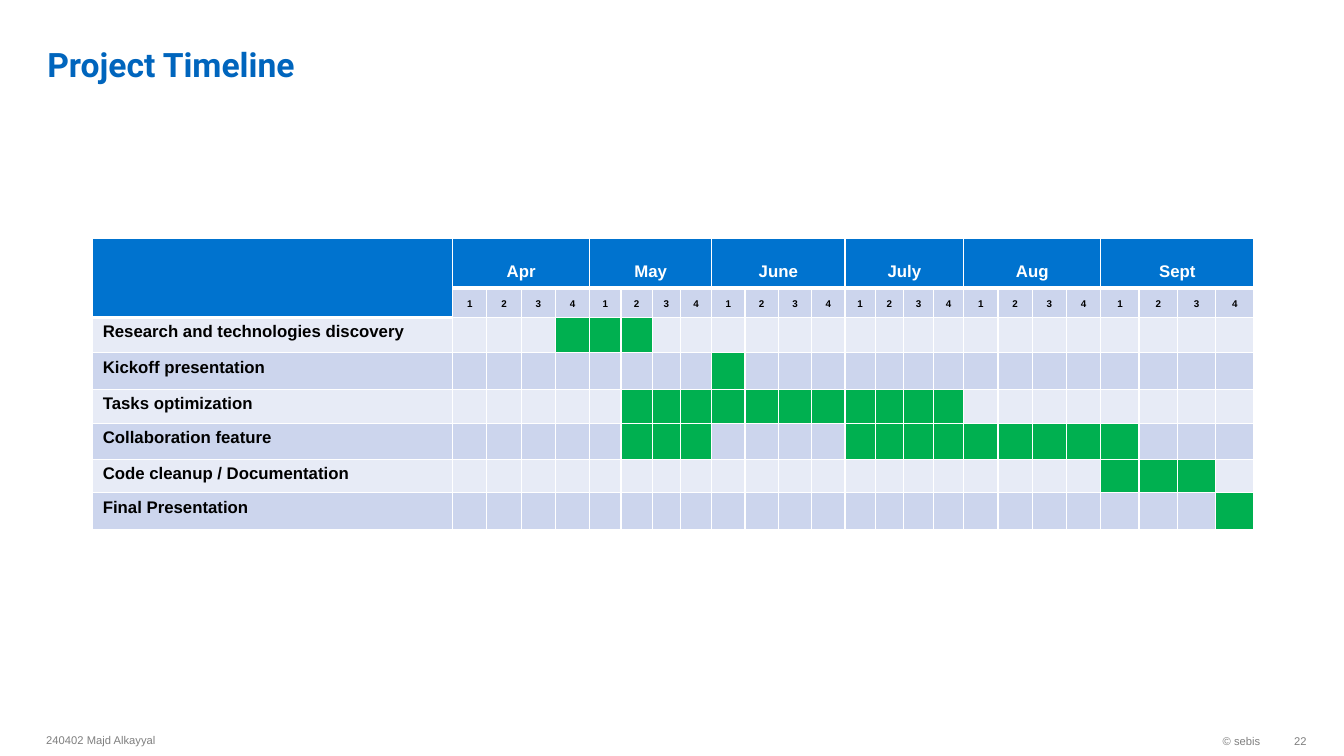
from dataclasses import dataclass

from lxml.etree import SubElement
from pptx import Presentation
from pptx.dml.color import RGBColor
from pptx.enum.text import MSO_ANCHOR, PP_ALIGN
from pptx.oxml.ns import qn
from pptx.util import Emu, Inches, Pt

TITLE_BLUE = RGBColor(0x00, 0x65, 0xBD)
HEADER_BLUE = RGBColor(0x00, 0x73, 0xCF)
BAND_DARK = RGBColor(0xCC, 0xD5, 0xED)
BAND_LIGHT = RGBColor(0xE7, 0xEB, 0xF6)
BAR_GREEN = RGBColor(0x00, 0xB0, 0x50)
FOOTER_GREY = RGBColor(0x7F, 0x7F, 0x7F)
WHITE = RGBColor(0xFF, 0xFF, 0xFF)
BLACK = RGBColor(0x00, 0x00, 0x00)

SLIDE_WIDTH, SLIDE_HEIGHT = Inches(13.33), Inches(7.5)
WEEKS_PER_MONTH = 4


@dataclass
class Style:
    size: float
    color: RGBColor
    bold: bool = False
    font: str = "Arial"
    align: PP_ALIGN = PP_ALIGN.LEFT
    spacing: float = 1.0


@dataclass
class Label:
    """Text with its place in percent of the slide."""
    text: str
    left: float
    top: float
    width: float
    height: float
    style: Style
    anchor: MSO_ANCHOR = MSO_ANCHOR.MIDDLE
    right_inset: float = 0.1
    vertical_inset: float = 0.05


@dataclass
class Month:
    name: str
    week_widths: tuple[float, ...]


@dataclass
class Task:
    """A row with the first and last week of each of its bars."""
    name: str
    height: float
    bars: tuple[tuple[int, int], ...]


FOOTER = Style(8, FOOTER_GREY)
FOOTER_RIGHT = Style(8, FOOTER_GREY, align=PP_ALIGN.RIGHT)
MONTH = Style(12, WHITE, True, align=PP_ALIGN.CENTER, spacing=2.0)
WEEK = Style(7, BLACK, True, align=PP_ALIGN.CENTER, spacing=1.5)
TASK = Style(12, BLACK, True)

LABELS = [
    Label("Project Timeline", 2.78, 0.67, 86.87, 10.53,
          Style(24, TITLE_BLUE, True, "Roboto", spacing=1.15),
          MSO_ANCHOR.BOTTOM, vertical_inset=0),
    Label("© sebis", 76.97, 95.87, 17.55, 4.27, FOOTER_RIGHT),
    Label("240402 Majd Alkayyal", 2.7, 95.73, 47.26, 4.27, FOOTER),
    Label("22", 94.52, 95.87, 2.7, 4.27, FOOTER_RIGHT, right_inset=0),
]

# Column widths and row heights in percent of the slide
TABLE_LEFT, TABLE_TOP = 6.9, 31.47
TASK_WIDTH = 26.78
HEADER_HEIGHTS = (5.6, 3.87)
MONTHS = [
    Month("Apr", (2.55,) * WEEKS_PER_MONTH),
    Month("May", (2.33, 2.33, 2.1, 2.33)),
    Month("June", (2.48,) * WEEKS_PER_MONTH),
    Month("July", (2.25, 2.1, 2.25, 2.25)),
    Month("Aug", (2.55,) * WEEKS_PER_MONTH),
    Month("Sept", (2.85,) * WEEKS_PER_MONTH),
]
TASKS = [
    Task("Research and technologies discovery", 4.67, ((4, 6),)),
    Task("Kickoff presentation", 4.8, ((9, 9),)),
    Task("Tasks optimization", 4.53, ((6, 16),)),
    Task("Collaboration feature", 4.8, ((6, 8), (13, 21))),
    Task("Code cleanup / Documentation", 4.4, ((21, 23),)),
    Task("Final Presentation", 4.8, ((24, 24),)),
]


def across(percent: float) -> Emu:
    return Emu(round(SLIDE_WIDTH * percent / 100))


def down(percent: float) -> Emu:
    return Emu(round(SLIDE_HEIGHT * percent / 100))


def write(frame, text: str, style: Style) -> None:
    para = frame.paragraphs[0]
    para.text = text
    para.alignment = style.align
    para.line_spacing = style.spacing
    for span in para.runs:
        span.font.name = style.font
        span.font.size = Pt(style.size)
        span.font.bold = style.bold
        span.font.color.rgb = style.color


def add_label(slide, label: Label) -> None:
    box = slide.shapes.add_textbox(across(label.left), down(label.top),
                                   across(label.width), down(label.height))
    frame = box.text_frame
    frame.word_wrap = True
    frame.vertical_anchor = label.anchor
    frame.margin_right = Inches(label.right_inset)
    frame.margin_top = frame.margin_bottom = Inches(label.vertical_inset)
    write(frame, label.text, label.style)


def dress_cell(cell, fill: RGBColor, top: float = 1, bottom: float = 1) -> None:
    """Set white borders and a fill, and keep an empty cell's line small."""
    properties = cell._tc.get_or_add_tcPr()
    for side, points in (("L", 1), ("R", 1), ("T", top), ("B", bottom)):
        line = SubElement(properties, qn(f"a:ln{side}"), w=str(Pt(points)))
        color = SubElement(SubElement(line, qn("a:solidFill")), qn("a:srgbClr"))
        color.set("val", str(WHITE))
    cell.fill.solid()
    cell.fill.fore_color.rgb = fill
    if not cell.text_frame.text:
        SubElement(cell.text_frame.paragraphs[0]._p, qn("a:endParaRPr"), sz="700")


def add_timeline(slide) -> None:
    widths = [TASK_WIDTH, *(w for month in MONTHS for w in month.week_widths)]
    heights = [*HEADER_HEIGHTS, *(task.height for task in TASKS)]
    table = slide.shapes.add_table(
        len(heights), len(widths), across(TABLE_LEFT), down(TABLE_TOP),
        across(sum(widths)), down(sum(heights))).table
    for column, width in zip(table.columns, widths):
        column.width = across(width)
    for row, height in zip(table.rows, heights):
        row.height = down(height)

    # Month and week headings
    table.cell(0, 0).merge(table.cell(1, 0))
    for index, month in enumerate(MONTHS):
        first = 1 + index * WEEKS_PER_MONTH
        heading = table.cell(0, first)
        heading.merge(table.cell(0, first + WEEKS_PER_MONTH - 1))
        write(heading.text_frame, month.name, MONTH)
        for week in range(WEEKS_PER_MONTH):
            write(table.cell(1, first + week).text_frame, str(week + 1), WEEK)
    for column in range(len(widths)):
        dress_cell(table.cell(0, column), HEADER_BLUE, bottom=3)
        if column == 0:
            dress_cell(table.cell(1, column), HEADER_BLUE, bottom=3)
        else:
            dress_cell(table.cell(1, column), BAND_DARK, top=3)

    # Task rows with their bars
    for index, task in enumerate(TASKS):
        row = index + len(HEADER_HEIGHTS)
        band = BAND_DARK if index % 2 else BAND_LIGHT
        write(table.cell(row, 0).text_frame, task.name, TASK)
        for week in range(len(widths)):
            busy = any(start <= week <= end for start, end in task.bars)
            top = 3 if index == 0 and week == 0 else 1
            dress_cell(table.cell(row, week), BAR_GREEN if busy else band, top=top)


def main() -> None:
    deck = Presentation()
    deck.slide_width, deck.slide_height = SLIDE_WIDTH, SLIDE_HEIGHT
    slide = deck.slides.add_slide(deck.slide_layouts[6])
    for label in LABELS:
        add_label(slide, label)
    add_timeline(slide)
    deck.save("out.pptx")


if __name__ == "__main__":
    main()
